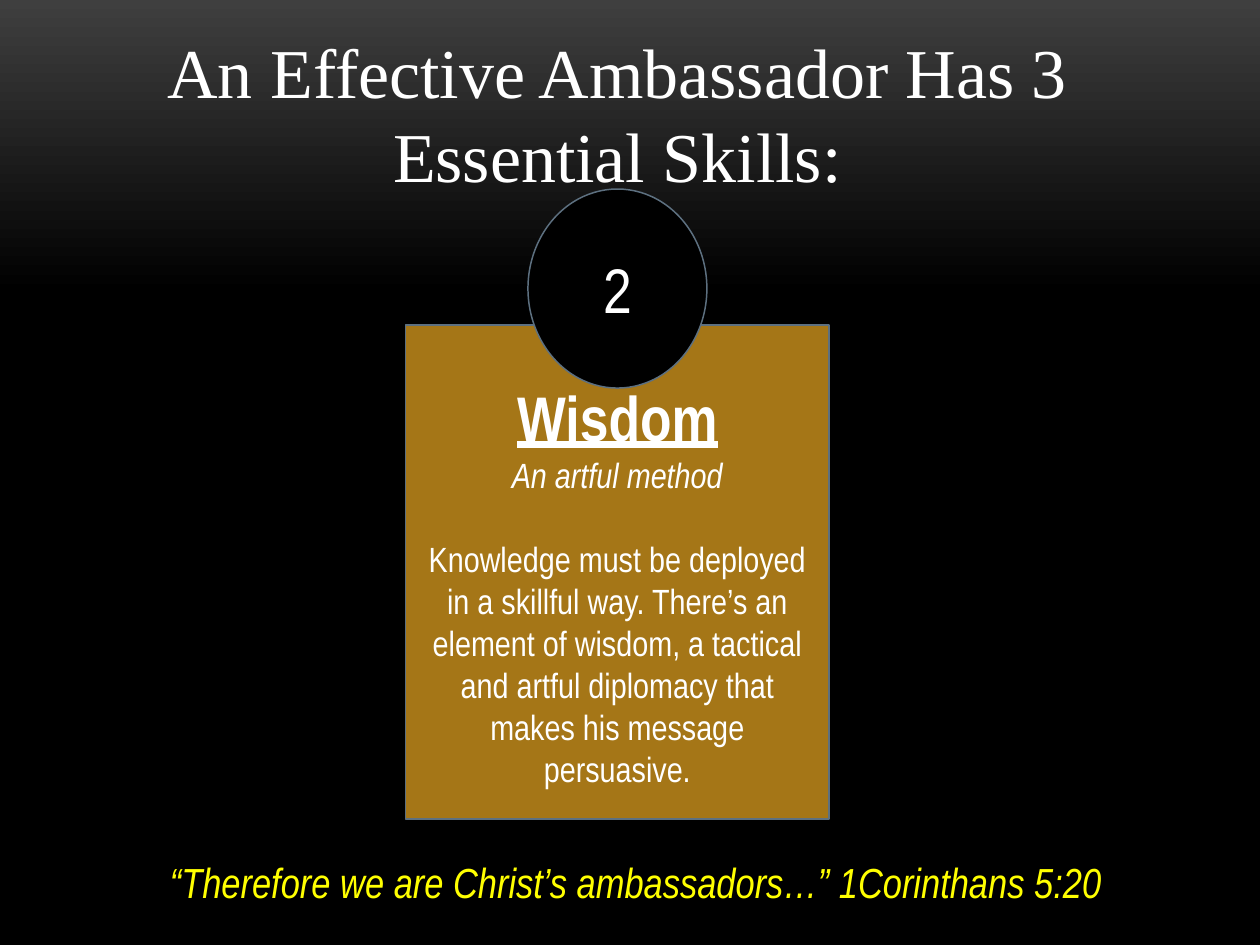
from copy import deepcopy
from dataclasses import dataclass

from pptx import Presentation
from pptx.dml.color import RGBColor
from pptx.enum.shapes import MSO_SHAPE
from pptx.enum.text import MSO_ANCHOR, PP_ALIGN
from pptx.oxml.ns import qn
from pptx.util import Inches, Pt


@dataclass(frozen=True)
class Theme:
    white: str = "FFFFFF"
    black: str = "000000"
    glow: str = "3F3F3F"
    gold: str = "A57617"
    outline: str = "5D7080"
    yellow: str = "FFFF00"
    serif: str = "Times New Roman"
    narrow: str = "Arial Narrow"
    title: int = 40
    heading: int = 36
    quote: int = 24
    body: int = 20


THEME = Theme()


@dataclass(frozen=True)
class Line:
    text: str
    size: int
    font: str = THEME.narrow
    color: str = THEME.white
    bold: bool = False
    italic: bool = False
    underline: bool = False
    before: int = 0
    align: PP_ALIGN = PP_ALIGN.CENTER


@dataclass(frozen=True)
class Box:
    left: float
    top: float
    width: float
    height: float

    def inches(self) -> tuple:
        return tuple(Inches(v) for v in (self.left, self.top, self.width, self.height))


def write(sp, lines: list[Line], anchor: MSO_ANCHOR) -> None:
    tf = sp.text_frame
    tf.word_wrap = True
    tf.vertical_anchor = anchor
    for i, line in enumerate(lines):
        p = tf.add_paragraph() if i else tf.paragraphs[0]
        p.text = line.text
        p.alignment = line.align
        if line.before:
            p.space_before = Pt(line.before)
        font = p.runs[0].font
        font.name, font.size = line.font, Pt(line.size)
        font.bold, font.italic, font.underline = line.bold, line.italic, line.underline
        font.color.rgb = RGBColor.from_string(line.color)


def add_text(s, box: Box, line: Line) -> None:
    write(s.shapes.add_textbox(*box.inches()), [line], MSO_ANCHOR.TOP)


def add_panel(s, kind: MSO_SHAPE, box: Box, fill: str, lines: list[Line],
              anchor: MSO_ANCHOR = MSO_ANCHOR.MIDDLE, inset: float = 0.05) -> None:
    sp = s.shapes.add_shape(kind, *box.inches())
    sp.shadow.inherit = False
    sp.fill.solid()
    sp.fill.fore_color.rgb = RGBColor.from_string(fill)
    sp.line.color.rgb = RGBColor.from_string(THEME.outline)
    sp.line.width = Pt(0.85)
    sp.text_frame.margin_top = Inches(inset)
    write(sp, lines, anchor)


def paint_background(s) -> None:
    fill = s.background.fill
    fill.gradient()
    fill.gradient_angle = 270
    first, second = fill.gradient_stops
    first.position, second.position = 0, 0.31
    first.color.rgb = RGBColor.from_string(THEME.glow)
    second.color.rgb = RGBColor.from_string(THEME.black)
    # A third stop keeps the rest of the slide black
    stop = list(s.element.iter(qn("a:gs")))[-1]
    end = deepcopy(stop)
    end.set("pos", "100000")
    stop.addnext(end)


def main() -> None:
    prs = Presentation()
    prs.slide_width, prs.slide_height = Inches(10), Inches(7.5)
    s = prs.slides.add_slide(prs.slide_layouts[6])
    paint_background(s)

    # Title
    add_text(s, Box(0.46, 0.18, 8.88, 1.45),
             Line("An Effective Ambassador Has 3 Essential Skills:", THEME.title, THEME.serif))

    # Skill card
    add_panel(s, MSO_SHAPE.RECTANGLE, Box(3.22, 2.58, 3.36, 3.92), THEME.gold, [
        Line("Wisdom", THEME.heading, bold=True, underline=True),
        Line("An artful method", THEME.body, italic=True),
        Line("Knowledge must be deployed in a skillful way. There’s an element of wisdom, "
             "a tactical and artful diplomacy that makes his message persuasive.",
             THEME.body, before=24),
    ], MSO_ANCHOR.TOP, 0.42)

    # Number badge
    add_panel(s, MSO_SHAPE.OVAL, Box(4.19, 1.5, 1.42, 1.58), THEME.black,
              [Line("2", THEME.heading)])

    # Quotation
    add_text(s, Box(1.25, 6.75, 7.69, 0.5),
             Line("“Therefore we are Christ’s ambassadors…” 1Corinthans 5:20", THEME.quote,
                  color=THEME.yellow, italic=True, align=PP_ALIGN.LEFT))

    prs.save("out.pptx")


if __name__ == "__main__":
    main()
